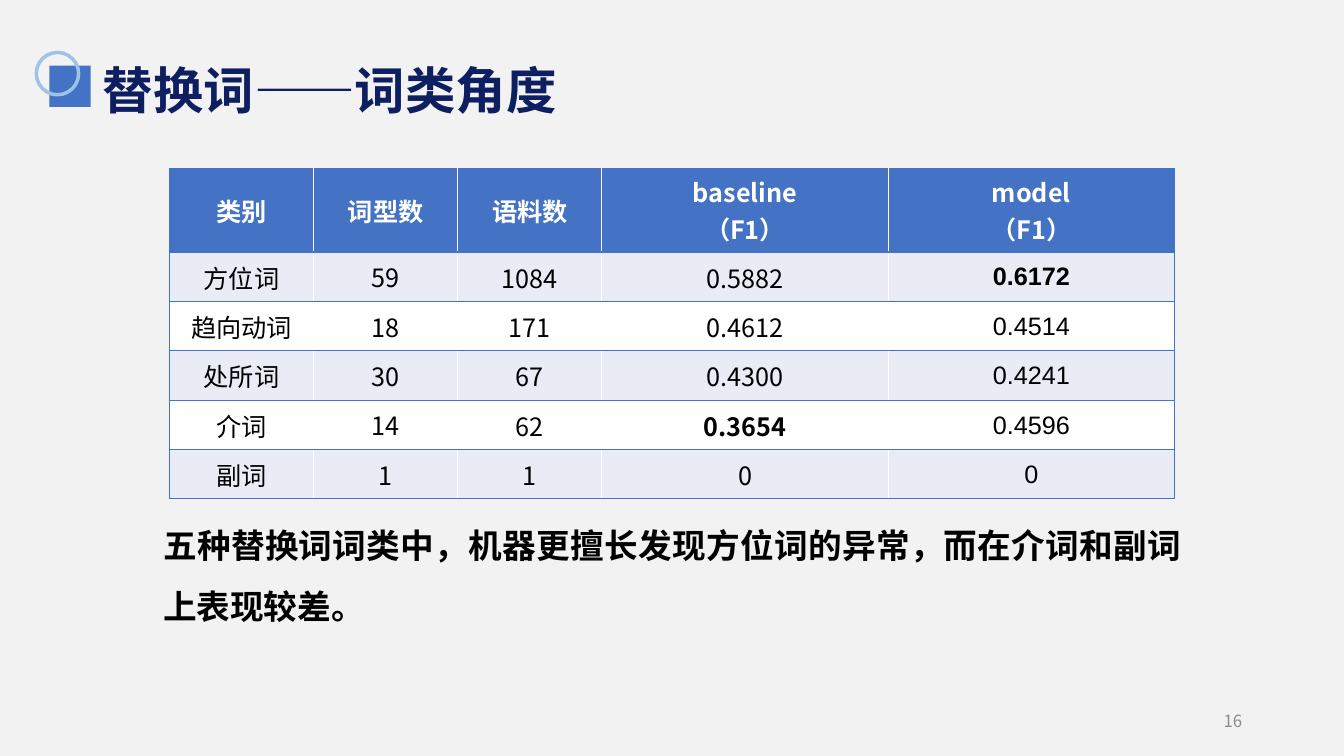
from lxml import etree
from pptx import Presentation
from pptx.dml.color import RGBColor
from pptx.enum import shapes, text
from pptx.oxml import ns
from pptx.util import Inches, Pt

BLUE = RGBColor(0x44, 0x72, 0xC4)
SKY = RGBColor(0x9D, 0xC3, 0xE6)
NAVY = RGBColor(0x0D, 0x1E, 0x61)
GRAY = RGBColor(0x8C, 0x8C, 0x8C)
PAPER = RGBColor(0xF2, 0xF2, 0xF3)
BAND = RGBColor(0xE9, 0xEB, 0xF5)
WHITE = RGBColor(0xFF, 0xFF, 0xFF)
BLACK = RGBColor(0, 0, 0)
SANS, ARIAL = "Noto Sans CJK SC", "Arial"
ALIGN = text.PP_ALIGN
MIDDLE = text.MSO_ANCHOR.MIDDLE

ROWS = [
    ["类别", "词型数", "语料数", "baseline\n（F1）", "model\n（F1）"],
    ["方位词", "59", "1084", "0.5882", "0.6172"],
    ["趋向动词", "18", "171", "0.4612", "0.4514"],
    ["处所词", "30", "67", "0.4300", "0.4241"],
    ["介词", "14", "62", "0.3654", "0.4596"],
    ["副词", "1", "1", "0", "0"],
]
STRONG = {"0.6172", "0.3654"}
WIDTHS = [1.43, 1.43, 1.43, 2.84, 2.84]
HEIGHTS = [0.83] + [0.49] * 5


class Page:
    """Holds the slide and its style."""

    def __init__(self, deck):
        self.slide = deck.slides.add_slide(deck.slide_layouts[5])
        fill = self.slide.background.fill
        fill.solid()
        fill.fore_color.rgb = PAPER

    def place(self, item, box):
        item.left, item.top, item.width, item.height = map(Inches, box)

    def fill_text(self, frame, words, size, color, bold=False, font=SANS,
                  align=ALIGN.LEFT, space=None):
        frame.word_wrap = True
        frame.vertical_anchor = MIDDLE
        for i, line in enumerate(words.split("\n")):
            para = frame.add_paragraph() if i else frame.paragraphs[0]
            para.alignment = align
            para.line_spacing = space
            run = para.add_run()
            run.text = line
            face = run.font
            face.size, face.bold, face.name = Pt(size), bold, font
            face.color.rgb = color
            east = etree.SubElement(run._r.get_or_add_rPr(), ns.qn("a:ea"))
            east.set("typeface", SANS)

    def title(self, words, box):
        item = self.slide.shapes.title
        self.place(item, box)
        self.fill_text(item.text_frame, words, 36, NAVY, True, space=0.9)

    def label(self, words, box, size, color, align):
        item = self.slide.shapes.add_textbox(*map(Inches, box))
        self.fill_text(item.text_frame, words, size, color, align=align)

    def shape(self, kind, box, fill=None, line=None):
        item = self.slide.shapes.add_shape(kind, *map(Inches, box))
        item.shadow.inherit = False
        if fill is None:
            item.fill.background()
        else:
            item.fill.solid()
            item.fill.fore_color.rgb = fill
        if line is None:
            item.line.fill.background()
        else:
            item.line.color.rgb = line
            item.line.width = Pt(2.5)
        return item

    def border(self, cell, sides):
        props = cell._tc.get_or_add_tcPr()
        for side in sides:
            line = etree.SubElement(props, ns.qn("a:ln" + side), w=str(Pt(1)))
            fill = etree.SubElement(line, ns.qn("a:solidFill"))
            etree.SubElement(fill, ns.qn("a:srgbClr"), val=str(BLUE))

    def table(self, rows, box):
        last = len(WIDTHS) - 1
        grid = self.slide.shapes.add_table(
            len(rows), len(WIDTHS), *map(Inches, box)).table
        for col, width in zip(grid.columns, WIDTHS):
            col.width = Inches(width)
        for r, row in enumerate(rows):
            grid.rows[r].height = Inches(HEIGHTS[r])
            for c, words in enumerate(row):
                cell = grid.cell(r, c)
                head = r == 0
                sides = {0: "LTB", last: "RTB"}.get(c, "TB")
                self.border(cell, sides)
                cell.fill.solid()
                cell.fill.fore_color.rgb = (
                    BLUE if head else BAND if r % 2 else WHITE)
                cell.vertical_anchor = MIDDLE
                if not head and c != 1:
                    cell.margin_left = cell.margin_right = Inches(0.01)
                    cell.margin_top, cell.margin_bottom = Inches(0.01), 0
                font = ARIAL if c == last and not head else SANS
                self.fill_text(cell.text_frame, words, 18,
                               WHITE if head else BLACK,
                               head or words in STRONG, font, ALIGN.CENTER)

    def note(self, words, box):
        item = self.shape(shapes.MSO_SHAPE.ROUNDED_RECTANGLE, box)
        item.adjustments[0] = 0
        frame = item.text_frame
        frame.margin_top = frame.margin_bottom = Inches(0.2)
        self.fill_text(frame, words, 24, BLACK, True,
                       align=ALIGN.JUSTIFY, space=1.5)


def main():
    deck = Presentation()
    deck.slide_width, deck.slide_height = Inches(13.33), Inches(7.5)
    page = Page(deck)

    # Heading with its mark
    page.shape(shapes.MSO_SHAPE.RECTANGLE, (0.49, 0.65, 0.41, 0.41), BLUE)
    page.shape(shapes.MSO_SHAPE.OVAL, (0.36, 0.52, 0.42, 0.42), line=SKY)
    page.title("替换词——词类角度", (0.92, 0.63, 11.5, 0.59))

    # Scores by word class
    page.table(ROWS, (1.68, 1.67, sum(WIDTHS), sum(HEIGHTS)))

    # Finding and page number
    page.note("五种替换词词类中，机器更擅长发现方位词的异常，而在介词和副词上表现较差。",
              (1.52, 4.84, 10.3, 1.54))
    page.label("16", (9.42, 6.95, 3, 0.4), 12, GRAY, ALIGN.RIGHT)
    deck.save("out.pptx")


if __name__ == "__main__":
    main()
